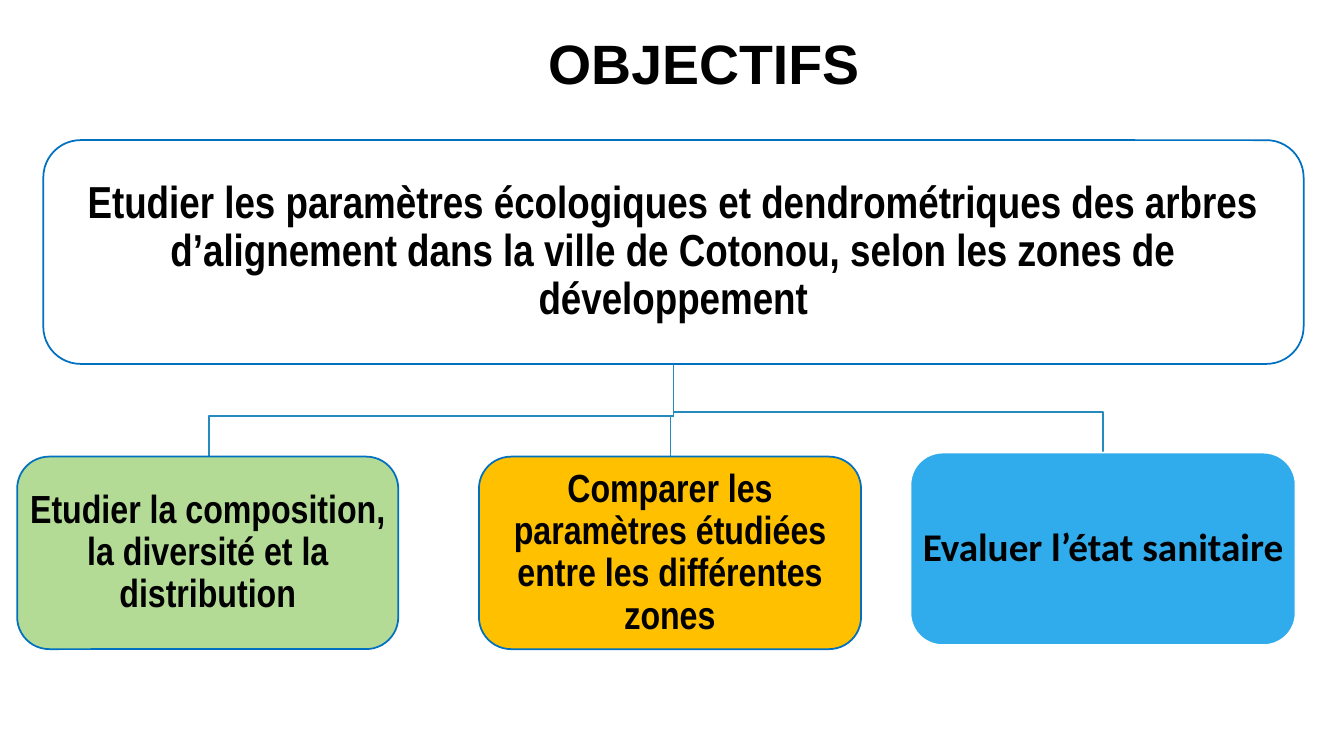
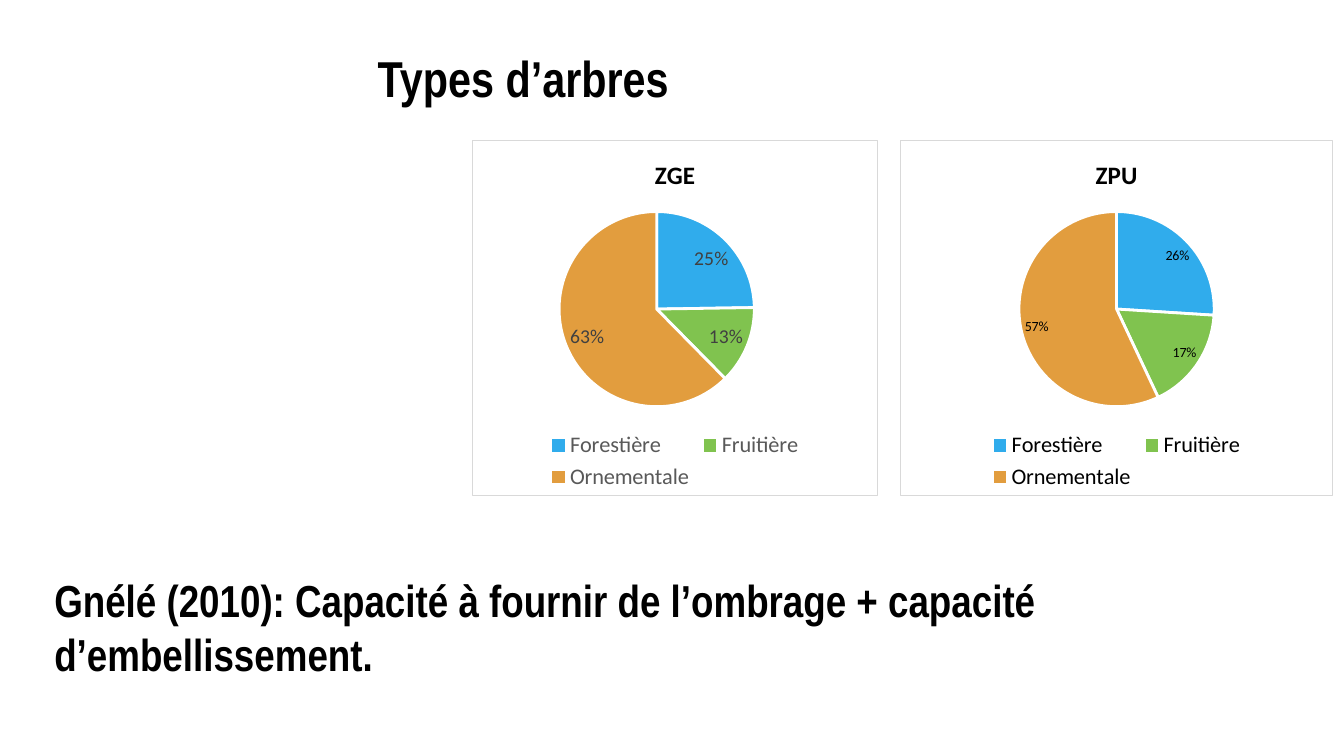
from lxml import etree
from pptx import Presentation, util as u
from pptx.chart import data as chart_data
from pptx.dml import color
from pptx.enum import chart as charts, shapes, text
from pptx.oxml import ns, parse_xml

BLACK, WHITE, BLUE = "000000", "FFFFFF", "30ACEC"
OUTLINE, CONNECTOR = "0070C0", "268ABD"
NARROW, CALIBRI = "Arial Narrow", "Calibri"
TREE_COLOURS = {"Forestière": BLUE, "Fruitière": "80C34F", "Ornementale": "E29D3E"}


def rgb(value):
    return color.RGBColor.from_string(value)


def write(frame, wording, size=28, font=NARROW, align=text.PP_ALIGN.CENTER,
          anchor=text.MSO_ANCHOR.MIDDLE, spacing=1.0, margin=None):
    frame.word_wrap = True
    frame.auto_size = text.MSO_AUTO_SIZE.NONE
    frame.vertical_anchor = anchor
    if margin is not None:
        frame.margin_left = frame.margin_right = u.Inches(margin)
        frame.margin_top = frame.margin_bottom = u.Inches(margin)
    para = frame.paragraphs[0]
    para.alignment = align
    para.line_spacing = spacing
    span = para.add_run()
    span.text = wording
    span.font.name, span.font.size, span.font.bold = font, u.Pt(size), True
    span.font.color.rgb = rgb(BLACK)


deck = Presentation()
deck.slide_width, deck.slide_height = u.Inches(13.33), u.Inches(7.5)

# Both slides: a title placeholder, moved and formatted
pages = []
for wording, area, size, font in [
    ("OBJECTIFS", (1.5, 0.22, 10.96, 0.79), 39.6, "Arial"),
    ("Types d’arbres", (0.44, 0.41, 9.5, 0.71), 36, NARROW),
]:
    page = deck.slides.add_slide(deck.slide_layouts[5])
    title = page.shapes.title
    title.left, title.top, title.width, title.height = map(u.Inches, area)
    write(title.text_frame, wording, size=size, font=font)
    pages.append(page)
goals_page, trees_page = pages

# Slide 1: branches from the main goal to each specific goal
trunk_x, trunk_y = 6.68, 3.61
for end_x, bend_y, end_y in [(10.94, 4.09, 4.49), (6.65, 4.13, 4.53), (2.07, 4.13, 4.53)]:
    builder = goals_page.shapes.build_freeform(u.Inches(trunk_x), u.Inches(trunk_y))
    corners = [(trunk_x, bend_y), (end_x, bend_y), (end_x, end_y)]
    builder.add_line_segments([(u.Inches(x), u.Inches(y)) for x, y in corners], close=False)
    branch = builder.convert_to_shape()
    branch.shadow.inherit = False
    branch.fill.background()
    branch.line.color.rgb = rgb(CONNECTOR)
    branch.line.width = u.Pt(1.25)

# Slide 1: goal boxes
PROCESS = shapes.MSO_SHAPE.FLOWCHART_ALTERNATE_PROCESS
ROUNDED = shapes.MSO_SHAPE.ROUNDED_RECTANGLE
for kind, area, fill, line, wording, size, font in [
    (PROCESS, (0.43, 1.39, 12.5, 2.22), WHITE, OUTLINE,
     "Etudier les paramètres écologiques et dendrométriques des arbres d’alignement "
     "dans la ville de Cotonou, selon les zones de développement", 32, NARROW),
    (PROCESS, (0.17, 4.53, 3.78, 1.91), "B3DB95", OUTLINE,
     "Etudier la composition, la diversité et la distribution", 28, NARROW),
    (PROCESS, (4.75, 4.53, 3.79, 1.91), "FFC000", OUTLINE,
     "Comparer les paramètres étudiées entre les différentes zones", 28, NARROW),
    (ROUNDED, (9.03, 4.49, 3.82, 1.91), BLUE, WHITE,
     "Evaluer l’état sanitaire", 28, CALIBRI),
]:
    box = goals_page.shapes.add_shape(kind, *map(u.Inches, area))
    box.shadow.inherit = False
    box.fill.solid()
    box.fill.fore_color.rgb = rgb(fill)
    box.line.color.rgb = rgb(line)
    box.line.width = u.Pt(1.25)
    write(box.text_frame, wording, size=size, font=font, spacing=0.9, margin=0.02)

# Slide 2: one pie per zone, with rounded percentages as values
for zone, left, width, values, label_size, label_colour, legend_colour, pie_x, pie_w in [
    ("ZGE", 4.68, 4.03, (25, 13, 63), 14, "404040", "595959", 0.21, 0.49),
    ("ZPU", 8.93, 4.29, (26, 17, 57), 10, BLACK, BLACK, 0.27, 0.46),
]:
    table = chart_data.CategoryChartData()
    table.categories = list(TREE_COLOURS)
    table.add_series(zone, values)
    pie = trees_page.shapes.add_chart(
        charts.XL_CHART_TYPE.PIE, u.Inches(left), u.Inches(1.39),
        u.Inches(width), u.Inches(3.53), table).chart
    pie.font.name, pie.font.size = CALIBRI, u.Pt(10)
    pie.font.color.rgb = rgb(BLACK)

    pie.has_title = True
    pie.chart_title.include_in_layout = False
    pie.chart_title.text_frame.text = zone
    heading = pie.chart_title.text_frame.paragraphs[0].runs[0].font
    heading.name, heading.size, heading.bold = CALIBRI, u.Pt(18), True
    heading.color.rgb = rgb(BLACK)

    pie.has_legend = True
    pie.legend.position = charts.XL_LEGEND_POSITION.BOTTOM
    pie.legend.include_in_layout = False
    pie.legend.font.name, pie.legend.font.size = CALIBRI, u.Pt(16)
    pie.legend.font.color.rgb = rgb(legend_colour)

    plot = pie.plots[0]
    plot.vary_by_categories = True
    for index, colour in enumerate(TREE_COLOURS.values()):
        piece = plot.series[0].points[index].format
        piece.fill.solid()
        piece.fill.fore_color.rgb = rgb(colour)
        piece.line.color.rgb = rgb(WHITE)
        piece.line.width = u.Pt(2)

    plot.has_data_labels = True
    labels = plot.data_labels
    labels.show_value = True
    labels.show_percentage = False
    labels.number_format, labels.number_format_is_linked = '0"%"', False
    labels.position = charts.XL_LABEL_POSITION.BEST_FIT
    labels.font.name, labels.font.size = CALIBRI, u.Pt(label_size)
    labels.font.color.rgb = rgb(label_colour)

    # Pie position inside the chart
    plot_area = pie._chartSpace.chart.plotArea
    for old_layout in plot_area.findall(ns.qn("c:layout")):
        plot_area.remove(old_layout)
    layout = etree.Element(ns.qn("c:layout"))
    manual = etree.SubElement(layout, ns.qn("c:manualLayout"))
    for tag, value in [("layoutTarget", "inner"), ("xMode", "edge"), ("yMode", "edge"),
                       ("x", pie_x), ("y", 0.2), ("w", pie_w), ("h", 0.55)]:
        etree.SubElement(manual, ns.qn("c:" + tag)).set("val", str(value))
    plot_area.insert(0, layout)

    # Chart background and border
    pie._chartSpace.chart.addnext(parse_xml(
        f'<c:spPr {ns.nsdecls("c", "a")}>'
        f'<a:solidFill><a:srgbClr val="{WHITE}"/></a:solidFill>'
        '<a:ln w="9525"><a:solidFill><a:srgbClr val="D9D9D9"/></a:solidFill></a:ln>'
        '</c:spPr>'))

# Slide 2: remark under the charts
remark = trees_page.shapes.add_textbox(*map(u.Inches, (0.44, 5.63, 12.35, 1.18)))
write(remark.text_frame,
      "Gnélé (2010): Capacité à fournir de l’ombrage + capacité d’embellissement.",
      size=32, align=text.PP_ALIGN.LEFT, anchor=text.MSO_ANCHOR.TOP)

deck.save("out.pptx")
